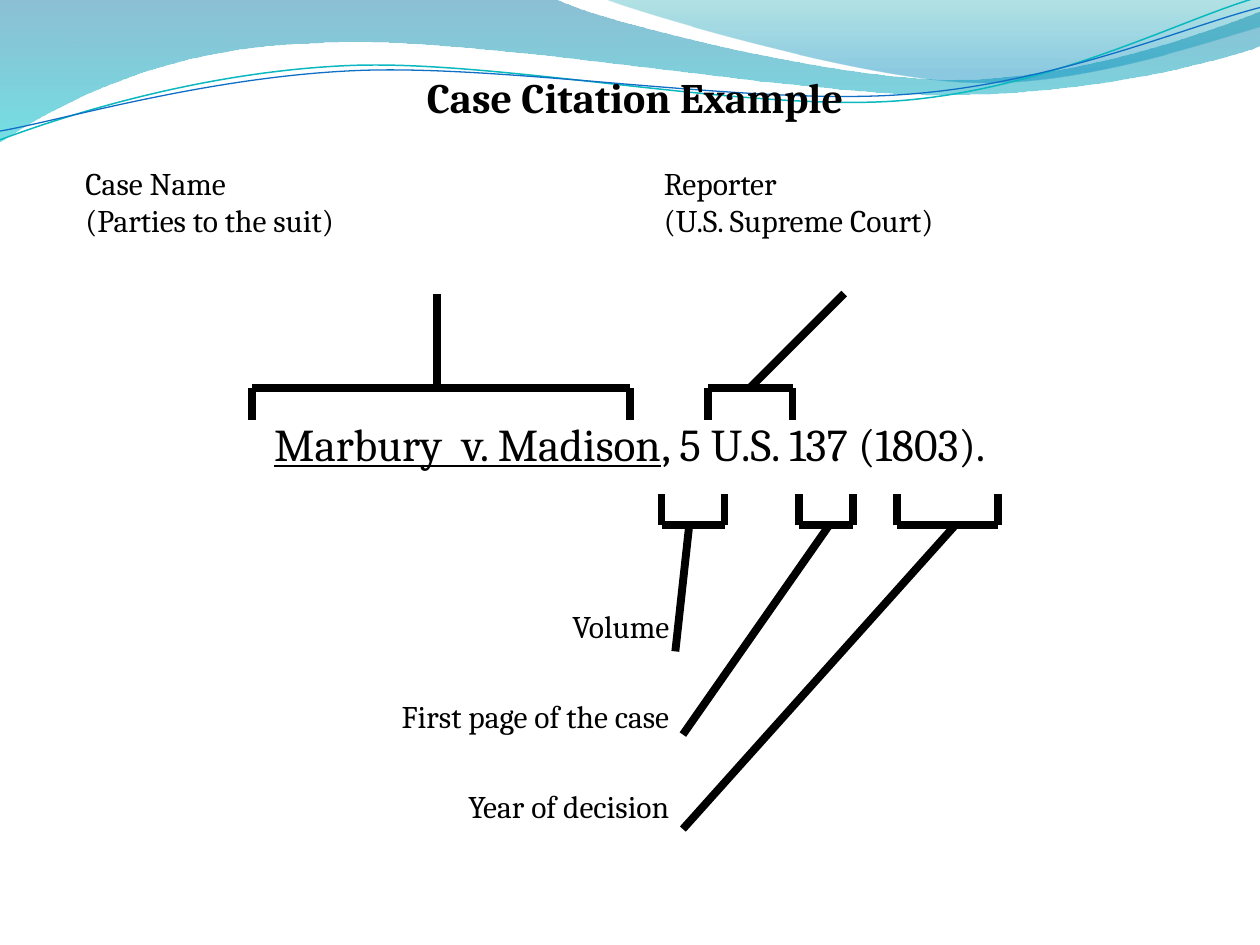
from dataclasses import dataclass
from math import cos, radians, sin
from typing import Any, NamedTuple, Optional

from lxml.etree import SubElement
from pptx import Presentation
from pptx.dml.color import RGBColor
from pptx.enum.text import MSO_ANCHOR, MSO_AUTO_SIZE, PP_ALIGN
from pptx.oxml.ns import qn
from pptx.util import Pt

PX = 9144  # EMU per px, 100 px to the inch

COLORS = {
    "ink": "000000",
    "deep_teal": "0074A1",
    "aqua": "00C6CF",
    "sea": "00A1A9",
    "sky": "008BBF",
    "teal_line": "0AB8BF",
    "blue_line": "0F6FC6",
}


class Point(NamedTuple):
    x: float
    y: float


class Stop(NamedTuple):
    position: float
    color: str
    opacity: int


class Run(NamedTuple):
    text: str
    font_format: dict[str, Any] = {}


@dataclass
class Wave:
    """Each segment holds one end point, or two controls and an end point."""
    start: tuple[int, int]
    segments: list[list[tuple[int, int]]]
    stops: Optional[list[Stop]] = None
    line_color: Optional[str] = None
    line_width: float = 0
    tilt: float = 0
    pivot: Point = Point(0, 0)


@dataclass
class Label:
    box: tuple[int, int, int, int]
    lines: list[list[Run]]
    size: int = 18
    align: PP_ALIGN = PP_ALIGN.LEFT
    anchor: MSO_ANCHOR = MSO_ANCHOR.TOP
    auto_size: MSO_AUTO_SIZE = MSO_AUTO_SIZE.SHAPE_TO_FIT_TEXT


@dataclass
class Bracket:
    left: int
    right: int
    bar_y: int
    tip_y: int
    leader_start: Point
    leader_end: Point


WAVES = [
    Wave((0, 0), [
        [(440, -1)],
        [(476, 17), (664, 63), (758, 63)],
        [(853, 63), (958, 26), (1000, 9)],
        [(1001, 36)],
        [(983, 44), (870, 76), (746, 75)],
        [(622, 75), (382, 28), (257, 34)],
        [(129, 36), (46, 83), (-1, 113)],
    ], stops=[Stop(0, "deep_teal", 45), Stop(1, "aqua", 55)]),
    Wave((479, -1), [
        [(509, 11), (682, 62), (769, 65)],
        [(856, 69), (961, 32), (1000, 21)],
        [(1000, 0)],
    ], stops=[Stop(0, "sea", 30), Stop(0.8, "sky", 45)]),
    Wave((0, 111), [
        [(48, 93), (158, 57), (277, 52)],
        [(395, 47), (593, 89), (713, 80)],
        [(833, 71), (938, 15), (998, -2)],
    ], line_color="teal_line", line_width=0.85, tilt=-2.7, pivot=Point(499, 57.5)),
    Wave((0, 104), [
        [(47, 96), (164, 61), (283, 56)],
        [(403, 51), (597, 84), (717, 75)],
        [(836, 67), (941, 21), (1000, 6)],
    ], line_color="blue_line", line_width=0.75, tilt=-2.7, pivot=Point(499.5, 59)),
]

LABELS = [
    Label((54, 54, 900, 45), [[Run("Case Citation Example", {"bold": True})]],
          24, PP_ALIGN.CENTER, MSO_ANCHOR.MIDDLE, MSO_AUTO_SIZE.NONE),
    Label((50, 325, 900, 345),
          [[Run("Marbury  v. Madison", {"underline": True}), Run(", 5 U.S. 137 (1803).")]],
          26, PP_ALIGN.CENTER, auto_size=MSO_AUTO_SIZE.NONE),
    *(Label((33, top, 508, 63), [[Run(part)]], align=PP_ALIGN.RIGHT)
      for top, part in [(477, "Volume"), (548, "First page of the case"),
                        (620, "Year of decision")]),
    *(Label((left, 125, 467, 117), [[Run(part)], [Run(detail)]])
      for left, part, detail in [(517, "Reporter", "(U.S. Supreme Court)"),
                                 (58, "Case Name", "(Parties to the suit)")]),
]

ABOVE = {"bar_y": 308, "tip_y": 333}
BELOW = {"bar_y": 417, "tip_y": 392}
BRACKETS = [
    Bracket(200, 500, **ABOVE, leader_start=Point(347, 233), leader_end=Point(347, 308)),
    Bracket(562, 629, **ABOVE, leader_start=Point(670, 233), leader_end=Point(595, 308)),
    Bracket(525, 575, **BELOW, leader_start=Point(536, 517), leader_end=Point(547, 417)),
    Bracket(634, 677, **BELOW, leader_start=Point(542, 583), leader_end=Point(658, 417)),
    Bracket(712, 792, **BELOW, leader_start=Point(542, 658), leader_end=Point(758, 417)),
]


def rgb(name: str) -> RGBColor:
    return RGBColor.from_string(COLORS[name])


def set_format(target: Any, values: dict[str, Any]) -> None:
    for name, value in values.items():
        setattr(target, name, value)


def untilt(wave: Wave, point: tuple[int, int]) -> tuple[int, int]:
    """Give the EMU position a point has before its wave is tilted."""
    angle = radians(-wave.tilt)
    dx, dy = point[0] - wave.pivot.x, point[1] - wave.pivot.y
    return (round((wave.pivot.x + dx * cos(angle) - dy * sin(angle)) * PX),
            round((wave.pivot.y + dx * sin(angle) + dy * cos(angle)) * PX))


def bend(shape: Any, segments: list[list[tuple[int, int]]]) -> None:
    """Join the straight steps of each three-point segment into one Bezier curve."""
    steps = iter(list(shape._element.iter(qn("a:lnTo"))))
    for segment in segments:
        first, *rest = [next(steps) for _ in segment]
        if rest:
            first.tag = qn("a:cubicBezTo")
            for step in rest:
                first.append(step[0])
                step.getparent().remove(step)


def fill_gradient(fill: Any, stops: list[Stop]) -> None:
    """Fill from top to bottom with see-through colours."""
    fill.gradient()
    fill.gradient_angle = 270
    for target, stop in zip(fill.gradient_stops, stops):
        target.position = stop.position
        target.color.rgb = rgb(stop.color)
    for tag, stop in zip(fill._xPr.iter(qn("a:srgbClr")), stops):
        SubElement(tag, qn("a:alpha"), val=str(stop.opacity * 1000))


def draw_wave(shapes: Any, wave: Wave) -> None:
    builder = shapes.build_freeform(*untilt(wave, wave.start))
    builder.add_line_segments(
        [untilt(wave, point) for segment in wave.segments for point in segment],
        close=wave.stops is not None)
    shape = builder.convert_to_shape()
    bend(shape, wave.segments)
    shape.rotation = wave.tilt
    shape.shadow.inherit = False
    if wave.stops:
        fill_gradient(shape.fill, wave.stops)
        shape.line.fill.background()
    else:
        shape.fill.background()
        shape.line.color.rgb = rgb(wave.line_color)
        shape.line.width = Pt(wave.line_width)


def draw_label(shapes: Any, label: Label) -> None:
    frame = shapes.add_textbox(*(length * PX for length in label.box)).text_frame
    set_format(frame, {"word_wrap": True, "vertical_anchor": label.anchor,
                       "auto_size": label.auto_size})
    for index, line in enumerate(label.lines):
        paragraph = frame.add_paragraph() if index else frame.paragraphs[0]
        paragraph.alignment = label.align
        for part in line:
            run = paragraph.add_run()
            run.text = part.text
            set_format(run.font, {"name": "Cambria", "size": Pt(label.size),
                                  **part.font_format})
            run.font.color.rgb = rgb("ink")


def draw_bracket(shapes: Any, bracket: Bracket) -> None:
    """Draw the leader, the bar and both ticks as one group."""
    group = shapes.add_group_shape()
    bar_ends = [Point(x, bracket.bar_y) for x in (bracket.left, bracket.right)]
    strokes = [(bracket.leader_start, bracket.leader_end), tuple(bar_ends)]
    strokes += [(end, Point(end.x, bracket.tip_y)) for end in bar_ends]
    for start, end in strokes:
        stroke = group.shapes.add_connector(1, *(v * PX for v in (*start, *end)))
        stroke.line.color.rgb = rgb("ink")
        stroke.line.width = Pt(4.5)
        SubElement(stroke._element.spPr, qn("a:effectLst"))


def main() -> None:
    deck = Presentation()
    set_format(deck, {"slide_width": 1000 * PX, "slide_height": 750 * PX})
    shapes = deck.slides.add_slide(deck.slide_layouts[6]).shapes
    for drawing, parts in ((draw_wave, WAVES), (draw_label, LABELS),
                           (draw_bracket, BRACKETS)):
        for part in parts:
            drawing(shapes, part)
    deck.save("out.pptx")


if __name__ == "__main__":
    main()
